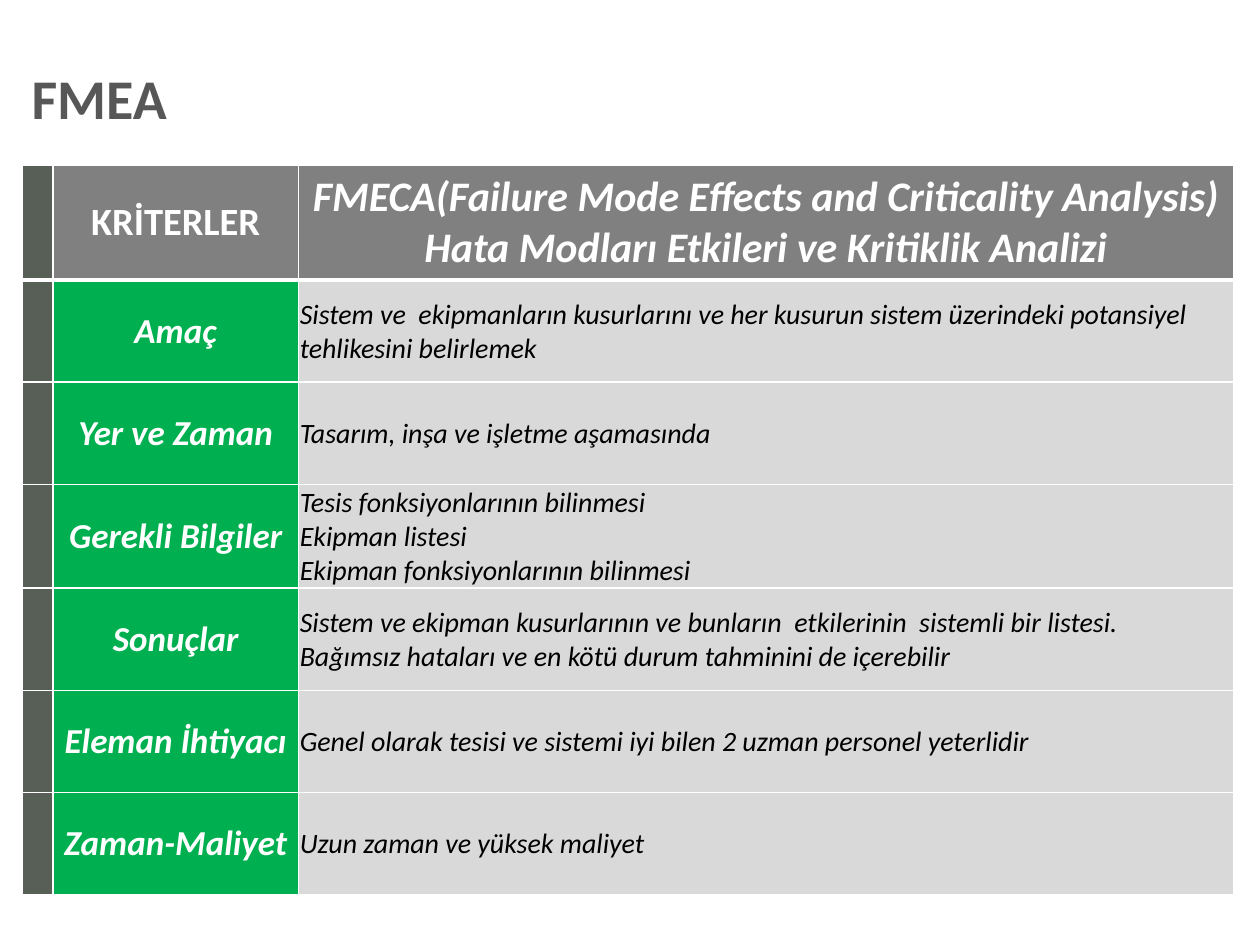
from dataclasses import dataclass

from lxml import etree
from pptx import Presentation
from pptx import util as u
from pptx.dml.color import RGBColor
from pptx.enum import text
from pptx.oxml.ns import qn


@dataclass(frozen=True)
class Theme:
    font: str = "Calibri"
    ink: str = "575757"
    white: str = "FFFFFF"
    black: str = "000000"
    stripe: str = "575F57"
    header: str = "808080"
    criterion: str = "00B050"
    answer: str = "D9D9D9"
    title_size: int = 32
    header_size: int = 24
    corner_size: int = 22
    criterion_size: int = 20
    answer_size: int = 16


THEME = Theme()
WIDTH, HEIGHT = 10, 7.5
COLUMNS = (0.23, 1.95, 7.42)
HEADER_HEIGHT, ROW_HEIGHT = 0.89, 0.81
BODY_MARGINS = (0.01, 0.01, 0.01, 0)
LEFT, CENTER = text.PP_ALIGN.LEFT, text.PP_ALIGN.CENTER

HEADING = ["FMECA(Failure Mode Effects and Criticality Analysis)",
           "Hata Modları Etkileri ve Kritiklik Analizi"]
CRITERIA = {
    "Amaç": ["Sistem ve  ekipmanların kusurlarını ve her kusurun sistem "
             "üzerindeki potansiyel tehlikesini belirlemek"],
    "Yer ve Zaman": ["Tasarım, inşa ve işletme aşamasında"],
    "Gerekli Bilgiler": ["Tesis fonksiyonlarının bilinmesi",
                         "Ekipman listesi",
                         "Ekipman fonksiyonlarının bilinmesi"],
    "Sonuçlar": ["Sistem ve ekipman kusurlarının ve bunların  etkilerinin  "
                 "sistemli bir listesi.",
                 "Bağımsız hataları ve en kötü durum tahminini de içerebilir"],
    "Eleman İhtiyacı": ["Genel olarak tesisi ve sistemi iyi bilen 2 uzman "
                        "personel yeterlidir"],
    "Zaman-Maliyet": ["Uzun zaman ve yüksek maliyet"],
}


def style(font, size, color, bold=True, italic=False):
    font.name, font.size = THEME.font, u.Pt(size)
    font.bold, font.italic = bold, italic
    font.color.rgb = RGBColor.from_string(color)


def set_margins(box, left, top, right, bottom):
    box.margin_left, box.margin_top = u.Inches(left), u.Inches(top)
    box.margin_right, box.margin_bottom = u.Inches(right), u.Inches(bottom)


def set_borders(cell, top=1, bottom=1):
    properties = cell._tc.get_or_add_tcPr()
    sides = {"lnL": 1, "lnR": 1, "lnT": top, "lnB": bottom}
    for position, (side, points) in enumerate(sides.items()):
        line = etree.Element(qn(f"a:{side}"), w=str(u.Pt(points)))
        fill = etree.SubElement(line, qn("a:solidFill"))
        etree.SubElement(fill, qn("a:srgbClr"), val=THEME.white)
        properties.insert(position, line)


def fill_cell(cell, fill, lines=(), align=CENTER, margins=None, **font):
    cell.fill.solid()
    cell.fill.fore_color.rgb = RGBColor.from_string(fill)
    cell.vertical_anchor = text.MSO_ANCHOR.MIDDLE
    if margins:
        set_margins(cell, *margins)
    if lines:
        cell.text_frame.text = "\n".join(lines)
        for paragraph in cell.text_frame.paragraphs:
            paragraph.alignment = align
            style(paragraph.font, **font)


def add_title(slide, words):
    title = slide.shapes.title
    title.left, title.top = u.Inches(0.025 * WIDTH), u.Inches(0.06 * HEIGHT)
    title.width, title.height = u.Inches(9.64), u.Inches(0.71)
    frame = title.text_frame
    frame.text = words
    frame.auto_size = text.MSO_AUTO_SIZE.NONE
    frame.vertical_anchor = text.MSO_ANCHOR.MIDDLE
    set_margins(frame, 0, 0.05, 0, 0.05)
    paragraph = frame.paragraphs[0]
    paragraph.alignment, paragraph.line_spacing = LEFT, 0.9
    style(paragraph.font, THEME.title_size, THEME.ink)


def add_criteria_table(slide):
    height = HEADER_HEIGHT + ROW_HEIGHT * len(CRITERIA)
    table = slide.shapes.add_table(
        len(CRITERIA) + 1, len(COLUMNS), u.Inches(0.18), u.Inches(1.31),
        u.Inches(sum(COLUMNS)), u.Inches(height)).table
    for column, width in zip(table.columns, COLUMNS):
        column.width = u.Inches(width)
    for index, row in enumerate(table.rows):
        row.height = u.Inches(ROW_HEIGHT if index else HEADER_HEIGHT)
        fill_cell(row.cells[0], THEME.stripe)

    # Header row
    fill_cell(table.cell(0, 1), THEME.header, ["KRİTERLER"],
              size=THEME.corner_size, color=THEME.white)
    fill_cell(table.cell(0, 2), THEME.header, HEADING,
              size=THEME.header_size, color=THEME.white, italic=True)

    # One row per criterion
    for row, (criterion, answer) in enumerate(CRITERIA.items(), start=1):
        fill_cell(table.cell(row, 1), THEME.criterion, [criterion],
                  margins=BODY_MARGINS, size=THEME.criterion_size,
                  color=THEME.white, italic=True)
        fill_cell(table.cell(row, 2), THEME.answer, answer, LEFT,
                  margins=BODY_MARGINS, size=THEME.answer_size,
                  color=THEME.black, bold=False, italic=True)

    # White rules, heavier below the header
    for index, row in enumerate(table.rows):
        for cell in row.cells:
            set_borders(cell, top=3 if index == 1 else 1,
                        bottom=1 if index else 3)


def main():
    deck = Presentation()
    deck.slide_width, deck.slide_height = u.Inches(WIDTH), u.Inches(HEIGHT)
    slide = deck.slides.add_slide(deck.slide_layouts[5])
    add_title(slide, "FMEA")
    add_criteria_table(slide)
    deck.save("out.pptx")


if __name__ == "__main__":
    main()
